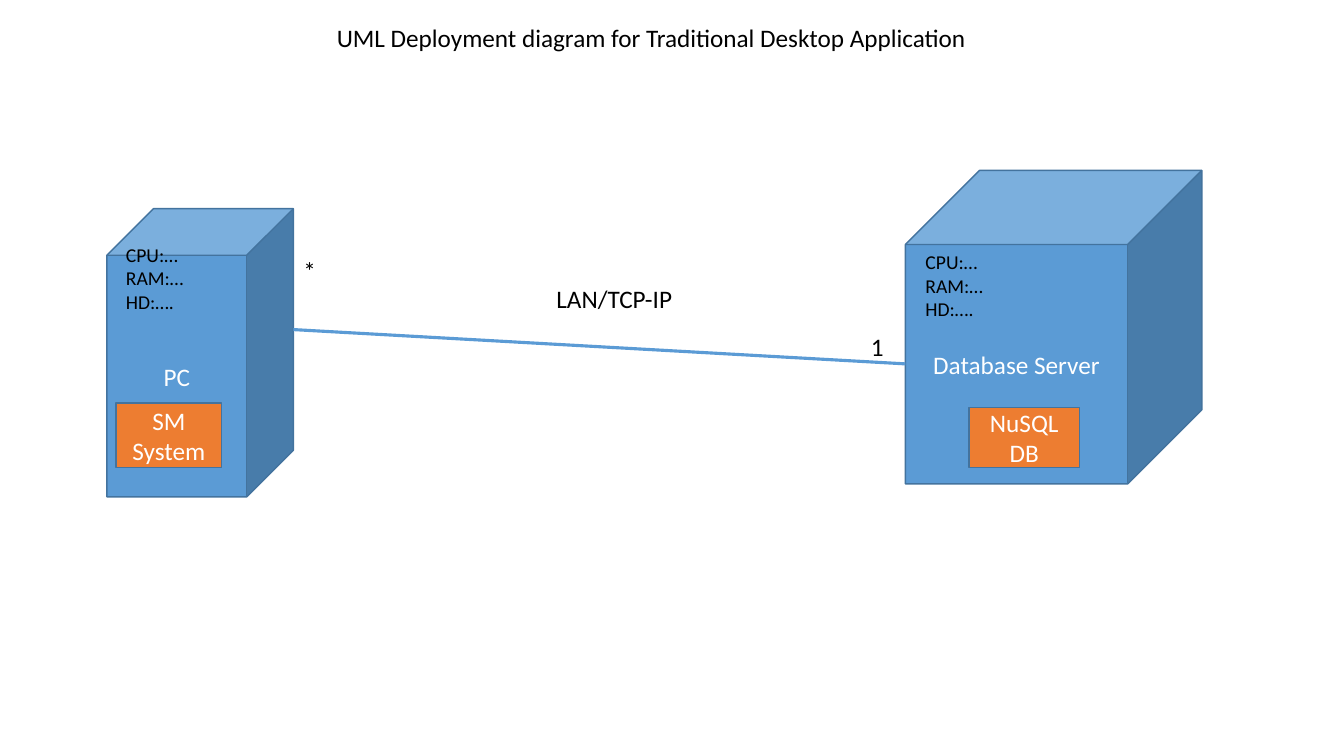
from dataclasses import dataclass

from lxml import etree
from pptx import Presentation
from pptx.dml.color import RGBColor
from pptx.enum.shapes import MSO_CONNECTOR, MSO_SHAPE
from pptx.enum.text import MSO_ANCHOR, MSO_AUTO_SIZE, PP_ALIGN
from pptx.oxml.ns import qn
from pptx.util import Inches, Pt


@dataclass(frozen=True)
class Theme:
    font: str = "Calibri"
    node: RGBColor = RGBColor(0x5B, 0x9B, 0xD5)
    component: RGBColor = RGBColor(0xED, 0x7D, 0x31)
    outline: RGBColor = RGBColor(0x43, 0x73, 0x9E)
    dark: RGBColor = RGBColor(0, 0, 0)
    light: RGBColor = RGBColor(0xFF, 0xFF, 0xFF)
    body_size: Pt = Pt(18)
    detail_size: Pt = Pt(14)


theme = Theme()


def write_text(shape, lines, size, color, alignment, anchor, wrap):
    frame = shape.text_frame
    frame.auto_size = MSO_AUTO_SIZE.NONE
    frame.word_wrap = wrap
    frame.vertical_anchor = anchor
    for index, line in enumerate(lines):
        paragraph = frame.add_paragraph() if index else frame.paragraphs[0]
        paragraph.alignment = alignment
        run = paragraph.add_run()
        run.text = line
        run.font.name = theme.font
        run.font.size = size
        run.font.color.rgb = color


def add_block(slide, preset, box, fill, lines):
    shape = slide.shapes.add_shape(preset, *map(Inches, box))
    shape.shadow.inherit = False
    shape.fill.solid()
    shape.fill.fore_color.rgb = fill
    shape.line.color.rgb = theme.outline
    shape.line.width = Pt(1)
    write_text(shape, lines, theme.body_size, theme.light,
               PP_ALIGN.CENTER, MSO_ANCHOR.MIDDLE, True)


presentation = Presentation()
presentation.slide_width = Inches(13.33)
presentation.slide_height = Inches(7.5)
slide = presentation.slides.add_slide(presentation.slide_layouts[5])

title = slide.shapes.title
title.left, title.top = Inches(3.24), Inches(0.17)
title.width, title.height = Inches(6.51), Inches(0.4)
write_text(title, ["UML Deployment diagram for Traditional Desktop Application"],
           theme.body_size, theme.dark, PP_ALIGN.LEFT, MSO_ANCHOR.TOP, False)

nodes = [
    ((8.98, 1.69, 2.94, 3.11), "Database Server"),
    ((1.06, 2.07, 1.85, 2.86), "PC"),
]
for box, name in nodes:
    add_block(slide, MSO_SHAPE.CUBE, box, theme.node, [name])

network = slide.shapes.add_connector(
    MSO_CONNECTOR.STRAIGHT, Inches(2.91), Inches(3.27), Inches(8.98), Inches(3.61))
network.line.color.rgb = theme.node
network.line.width = Pt(2.25)
etree.SubElement(network._element.spPr, qn("a:effectLst"))

hardware = ["CPU:…", "RAM:…", "HD:…."]
labels = [
    ((9.08, 2.43, 0.78, 0.81), hardware, theme.detail_size),
    ((1.15, 2.36, 0.78, 0.81), hardware, theme.detail_size),
    ((5.42, 2.76, 1.37, 0.4), ["LAN/TCP-IP"], theme.body_size),
    ((8.54, 3.24, 0.33, 0.4), ["1"], theme.body_size),
    ((2.91, 2.48, 0.33, 0.4), ["*"], theme.body_size),
]
for box, lines, size in labels:
    label = slide.shapes.add_textbox(*map(Inches, box))
    write_text(label, lines, size, theme.dark, PP_ALIGN.LEFT, MSO_ANCHOR.TOP, False)

components = [
    ((1.15, 4, 1.05, 0.64), ["SM System"]),
    ((9.61, 4.04, 1.1, 0.6), ["NuSQL", "DB"]),
]
for box, lines in components:
    add_block(slide, MSO_SHAPE.RECTANGLE, box, theme.component, lines)

presentation.save("out.pptx")
